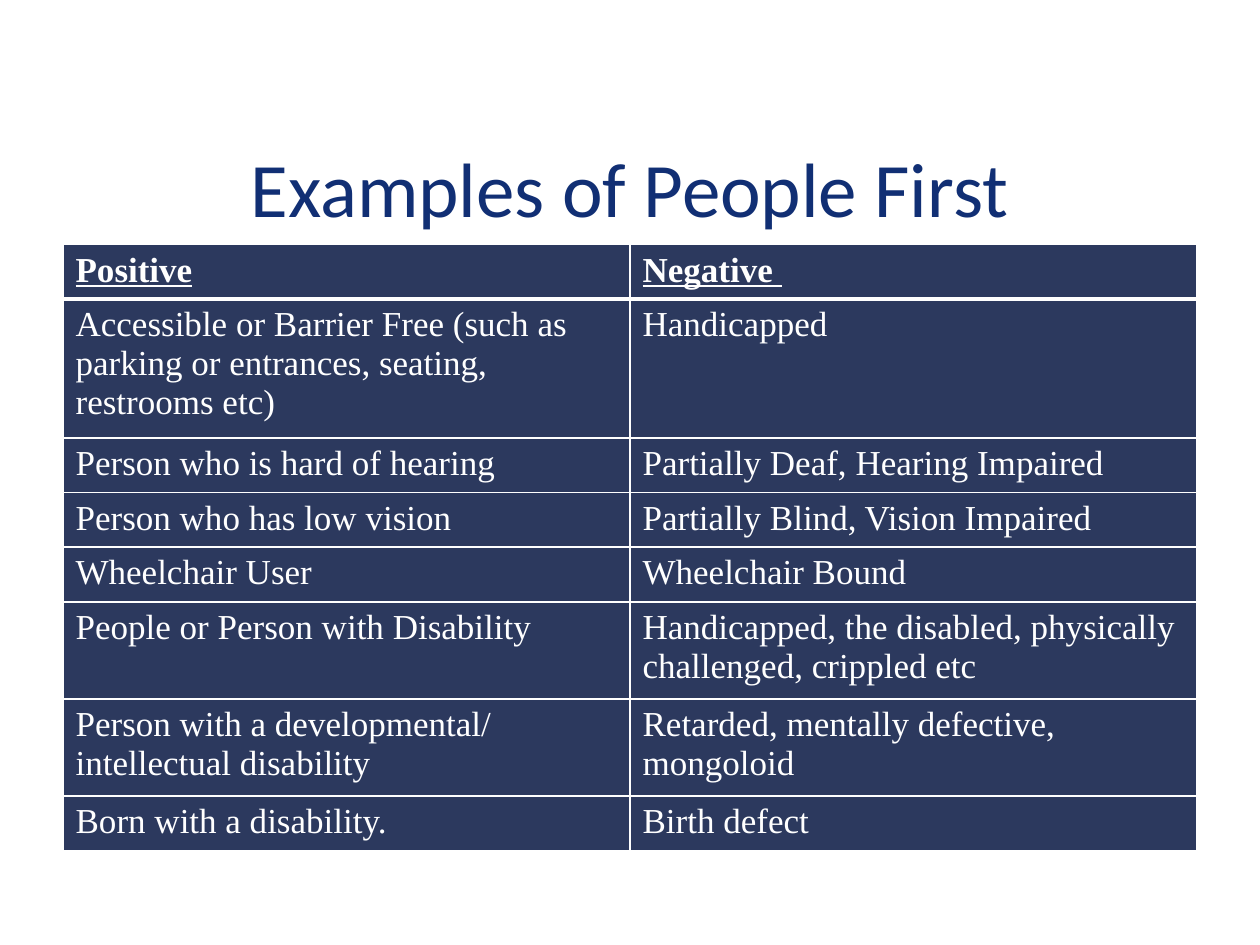
from pptx import Presentation
from pptx.dml.color import RGBColor
from pptx.enum.text import MSO_ANCHOR as Anchor, PP_ALIGN as Align
from pptx.oxml.xmlchemy import OxmlElement
from pptx.util import Inches, Pt

EXAMPLES = [
    ("Positive", "Negative "),
    ("Accessible or Barrier Free (such as parking or entrances, seating, restrooms etc)", "Handicapped"),
    ("Person who is hard of hearing", "Partially Deaf, Hearing Impaired"),
    ("Person who has low vision", "Partially Blind, Vision Impaired"),
    ("Wheelchair User", "Wheelchair Bound"),
    ("People or Person with Disability", "Handicapped, the disabled, physically challenged, crippled etc"),
    ("Person with a developmental/ intellectual disability", "Retarded, mentally defective, mongoloid"),
    ("Born with a disability.", "Birth defect"),
]
ROW_HEIGHTS = [0.43, 1.1, 0.43, 0.43, 0.43, 0.77, 0.77, 0.43]


def color(value):
    return RGBColor.from_string(value)


def write(frame, text, font, size, ink, bold=False, underline=False, align=Align.LEFT):
    frame.word_wrap = True
    paragraph = frame.paragraphs[0]
    paragraph.alignment = align
    run = paragraph.add_run()
    run.text = text
    run.font.name = font
    run.font.size = Pt(size)
    run.font.bold = bold
    run.font.underline = underline
    run.font.color.rgb = color(ink)


class ExampleSlide:
    title_font = "Calibri"
    table_font = "Times New Roman"
    title_ink = "112F74"
    white = "FFFFFF"
    navy = "2C395E"

    def __init__(self, deck):
        self.slide = deck.slides.add_slide(deck.slide_layouts[6])

    def title(self, text, left, top, width, height):
        heading = self.slide.shapes.add_textbox(
            Inches(left), Inches(top), Inches(width), Inches(height)).text_frame
        heading.vertical_anchor = Anchor.MIDDLE
        write(heading, text, self.title_font, 44, self.title_ink, align=Align.CENTER)

    def borders(self, cell, bottom):
        properties = cell._tc.get_or_add_tcPr()
        widths = {"a:lnL": 1, "a:lnR": 1, "a:lnT": 1, "a:lnB": bottom}
        for position, (side, width) in enumerate(widths.items()):
            line = OxmlElement(side)
            line.set("w", str(Pt(width)))
            fill = OxmlElement("a:solidFill")
            ink = OxmlElement("a:srgbClr")
            ink.set("val", self.white)
            fill.append(ink)
            line.append(fill)
            properties.insert(position, line)

    def table(self, rows, heights, left, top, width):
        grid = self.slide.shapes.add_table(
            len(rows), len(rows[0]), Inches(left), Inches(top),
            Inches(width), Inches(sum(heights))).table
        for row, height in zip(grid.rows, heights):
            row.height = Inches(height)
        for r, row in enumerate(rows):
            header = r == 0
            for c, text in enumerate(row):
                cell = grid.cell(r, c)
                cell.fill.solid()
                cell.fill.fore_color.rgb = color(self.navy)
                self.borders(cell, bottom=3 if header else 1)
                write(cell.text_frame, text, self.table_font, 20, self.white,
                      bold=header, underline=header)


def main():
    deck = Presentation()
    deck.slide_width, deck.slide_height = Inches(10), Inches(7.5)
    page = ExampleSlide(deck)
    page.title("Examples of People First", 0.5, 0.86, 9, 1.25)
    page.table(EXAMPLES, ROW_HEIGHTS, 0.5, 1.94, 9)
    deck.save("out.pptx")


if __name__ == "__main__":
    main()
